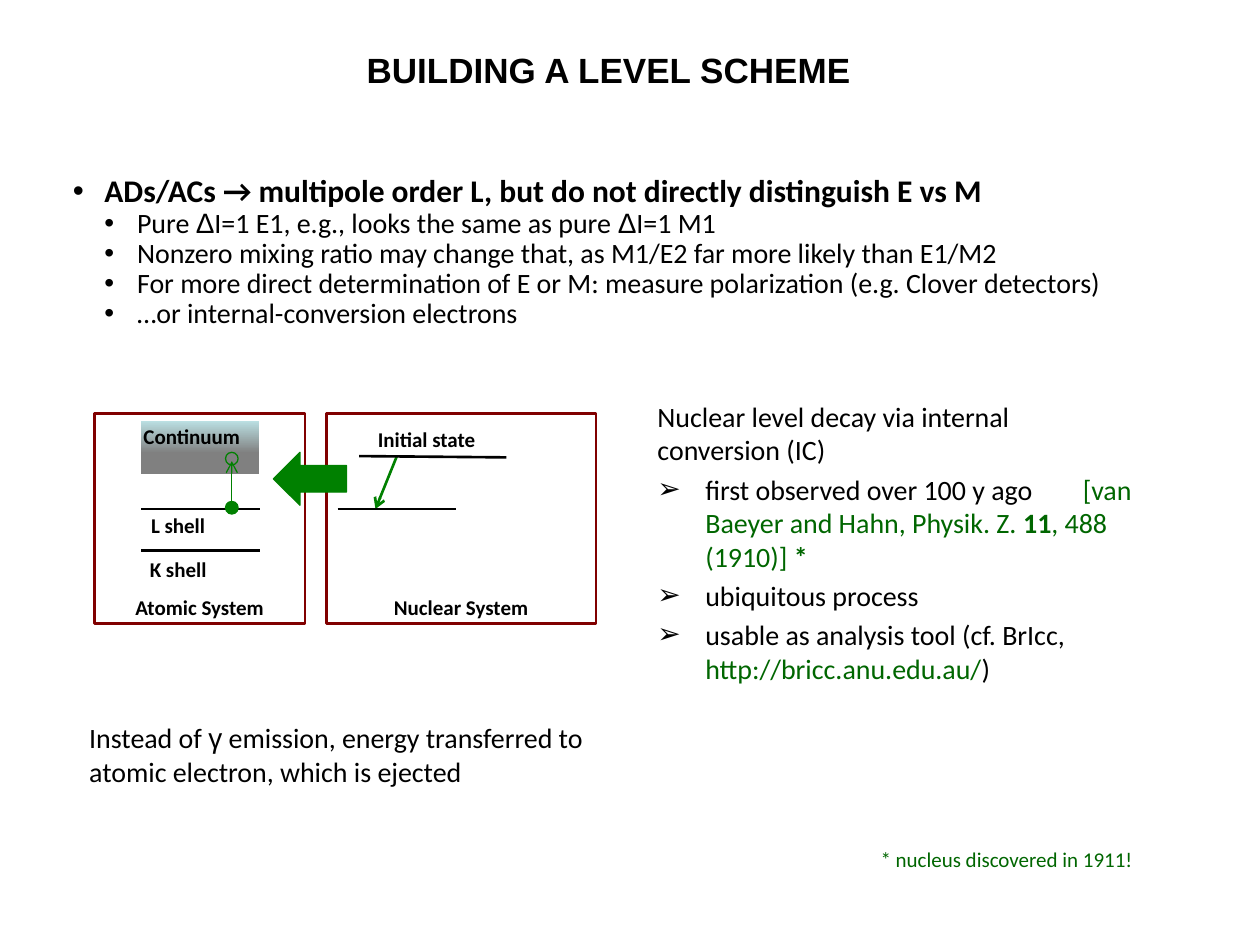
from lxml import etree
from pptx import Presentation
from pptx.dml.color import RGBColor
from pptx.enum.shapes import MSO_CONNECTOR, MSO_SHAPE
from pptx.enum.text import MSO_ANCHOR, MSO_AUTO_SIZE, PP_ALIGN
from pptx.oxml.ns import qn
from pptx.util import Inches, Pt

BLACK = RGBColor(0x00, 0x00, 0x00)
MAROON = RGBColor(0x80, 0x00, 0x00)
GREEN = RGBColor(0x00, 0x80, 0x00)
DARK_GREEN = RGBColor(0x00, 0x66, 0x00)
GRAY = RGBColor(0x80, 0x80, 0x80)
PALE_BLUE = RGBColor(0xBB, 0xE0, 0xE3)

STRAIGHT = MSO_CONNECTOR.STRAIGHT
RECTANGLE, ELLIPSE, RIGHT_ARROW = MSO_SHAPE.RECTANGLE, MSO_SHAPE.OVAL, MSO_SHAPE.RIGHT_ARROW
LEFT, CENTER = PP_ALIGN.LEFT, PP_ALIGN.CENTER
MIDDLE = MSO_ANCHOR.MIDDLE
NO_FIT = MSO_AUTO_SIZE.NONE

GREEK = {"font": "Arial"}
CITATION = {"color": DARK_GREEN}


def write_paragraph(paragraph, content, size=16, font="Calibri", color=BLACK, bold=False,
                    align=LEFT, bullet=None, margin=0, hanging=0, level=0,
                    line_spacing=None, space_before=0):
    """Fill a paragraph; content is a string or a list of strings and (string, changes)."""
    properties = paragraph._p.get_or_add_pPr()
    properties.set("marL", str(Inches(margin)))
    properties.set("indent", str(-Inches(hanging)))
    if bullet:
        etree.SubElement(properties, qn("a:buFont")).set("typeface", "Arial")
        etree.SubElement(properties, qn("a:buChar")).set("char", bullet)
    paragraph.level = level
    paragraph.alignment = align
    paragraph.space_before = Pt(space_before)
    if line_spacing:
        paragraph.line_spacing = line_spacing
    for part in [content] if isinstance(content, str) else content:
        text, changes = (part, {}) if isinstance(part, str) else part
        style = {"font": font, "color": color, "bold": bold, "spacing": 0, **changes}
        run = paragraph.add_run()
        run.text = text
        run.font.size = Pt(size)
        run.font.name = style["font"]
        run.font.bold = style["bold"]
        run.font.color.rgb = style["color"]
        if style["spacing"]:
            run.font._element.set("spc", str(style["spacing"] * 100))


class SlideBuilder:
    """Holds the current slide and adds styled elements to it."""

    def __init__(self, slide):
        self.slide = slide

    def title(self, text, left, top, width, height):
        shape = self.slide.shapes.title
        shape.left, shape.top = Inches(left), Inches(top)
        shape.width, shape.height = Inches(width), Inches(height)
        frame = shape.text_frame
        frame.vertical_anchor = MIDDLE
        frame.auto_size = NO_FIT
        write_paragraph(frame.paragraphs[0], text, size=20, font="Arial", bold=True,
                        align=CENTER, line_spacing=0.9)

    def text(self, paragraphs, left, top, width, height, wrap=True):
        """Add a text box; paragraphs is a list of (content, format)."""
        box = self.slide.shapes.add_textbox(
            Inches(left), Inches(top), Inches(width), Inches(height))
        frame = box.text_frame
        frame.word_wrap = wrap
        for index, (content, style) in enumerate(paragraphs):
            paragraph = frame.add_paragraph() if index else frame.paragraphs[0]
            write_paragraph(paragraph, content, **style)

    def label(self, text, left, top, width, align=LEFT):
        style = {"size": 12, "bold": True, "align": align}
        self.text([(text, style)], left, top, width, 0.3, wrap=align == CENTER)

    def shape(self, kind, left, top, width, height, fill=None, line=None, line_width=0.75):
        shape = self.slide.shapes.add_shape(
            kind, Inches(left), Inches(top), Inches(width), Inches(height))
        shape.shadow.inherit = False
        if fill:
            shape.fill.solid()
            shape.fill.fore_color.rgb = fill
        else:
            shape.fill.background()
        if line:
            shape.line.color.rgb = line
            shape.line.width = Pt(line_width)
        else:
            shape.line.fill.background()
        return shape

    def line(self, x1, y1, x2, y2, color=BLACK, width=1.5, arrow=False):
        """Add a straight line; an arrow points at its first end."""
        connector = self.slide.shapes.add_connector(
            STRAIGHT, Inches(x1), Inches(y1), Inches(x2), Inches(y2))
        connector.line.color.rgb = color
        connector.line.width = Pt(width)
        if arrow:
            outline = connector.line._get_or_add_ln()
            etree.SubElement(outline, qn("a:headEnd")).set("type", "arrow")
        etree.SubElement(connector._element.spPr, qn("a:effectLst"))


def main():
    presentation = Presentation()
    presentation.slide_width, presentation.slide_height = Inches(10), Inches(7.5)
    slide = presentation.slides.add_slide(presentation.slide_layouts[5])
    builder = SlideBuilder(slide)
    builder.title("BUILDING A LEVEL SCHEME", 1.58, 0.3, 6.5, 0.55)

    # Main bullets
    main_point = {"size": 18, "bold": True, "bullet": "•", "margin": 0.25,
                  "hanging": 0.25, "line_spacing": 0.9}
    detail = {"bullet": "•", "margin": 0.51, "hanging": 0.26, "level": 1,
              "line_spacing": 0.9}
    builder.text([
        ("ADs/ACs → multipole order L, but do not directly distinguish E vs M", main_point),
        (["Pure ", ("Δ", GREEK), "I=1 E1, e.g., looks the same as pure ", ("Δ", GREEK),
          "I=1 M1"], detail),
        ("Nonzero mixing ratio may change that, as M1/E2 far more likely than E1/M2", detail),
        ("For more direct determination of E or M: measure polarization "
         "(e.g. Clover detectors)", detail),
        ("…or internal-conversion electrons", detail),
    ], 0.48, 1.34, 9.05, 3.04)

    # Atomic system: frame, shells and continuum
    builder.shape(RECTANGLE, 0.75, 3.28, 1.67, 1.67, line=MAROON, line_width=1.5)
    for name, left, level_y, label_y in (("L shell", 1.1, 4.04, 4.02),
                                         ("K shell", 1.09, 4.37, 4.37)):
        builder.line(1.12, level_y, 2.06, level_y)
        builder.label(name, left, label_y, 0.75)
    builder.label("Atomic System", 0.75, 4.67, 1.67, align=CENTER)
    continuum = builder.shape(RECTANGLE, 1.12, 3.34, 0.94, 0.42)
    continuum.fill.gradient()
    continuum.fill.gradient_angle = 90
    for stop, position, color in zip(continuum.fill.gradient_stops, (0.39, 1),
                                     (GRAY, PALE_BLUE)):
        stop.position = position
        stop.color.rgb = color
    builder.label("Continuum", 1.04, 3.31, 1.09)

    # Electron ejected from the L shell
    builder.shape(ELLIPSE, 1.79, 3.59, 0.1, 0.1, line=GREEN)
    builder.shape(ELLIPSE, 1.79, 3.98, 0.1, 0.1, fill=GREEN, line=GREEN)
    builder.line(1.84, 3.66, 1.84, 3.99, color=GREEN, width=0.75, arrow=True)

    # Nuclear system: frame, two levels and the transition
    builder.line(2.98, 4.04, 3.15, 3.62, color=GREEN, arrow=True)
    builder.line(2.68, 4.04, 3.62, 4.04)
    builder.label("Initial state", 2.9, 3.34, 1.08)
    builder.line(2.85, 3.62, 4.02, 3.63)
    builder.label("Nuclear System", 2.91, 4.67, 1.5, align=CENTER)
    builder.shape(RECTANGLE, 2.59, 3.28, 2.14, 1.67, line=MAROON, line_width=1.5)

    # Energy transfer from nucleus to atom
    transfer = builder.shape(RIGHT_ARROW, 2.17, 3.59, 0.58, 0.42, fill=GREEN, line=GREEN)
    transfer.rotation = 180

    # Facts about internal conversion
    fact = {"bullet": "➢", "margin": 0.38, "hanging": 0.38, "space_before": 3.2}
    bold_citation = {**CITATION, "bold": True}
    builder.text([
        ("Nuclear level decay via internal conversion (IC)", {}),
        (["first observed over 100 y ago", (" ", {"spacing": 25}),
          ("[van Baeyer and Hahn, Physik. Z. ", CITATION), ("11", bold_citation),
          (", 488 (1910)] ", CITATION), ("*", bold_citation)], fact),
        ("ubiquitous process", fact),
        (["usable as analysis tool (cf. BrIcc, ", ("http://bricc.anu.edu.au/", CITATION),
          ")"], fact),
    ], 5.12, 3.12, 3.97, 2.8)

    # Footnote and explanation
    builder.text([("* nucleus discovered in 1911!", {"size": 12, "color": DARK_GREEN})],
                 6.89, 6.67, 2.38, 0.3, wrap=False)
    builder.text([(["Instead of ", ("γ", GREEK),
                    " emission, energy transferred to atomic electron, which is ejected"],
                   {})], 0.61, 5.67, 4.27, 0.64)

    presentation.save("out.pptx")


if __name__ == "__main__":
    main()
